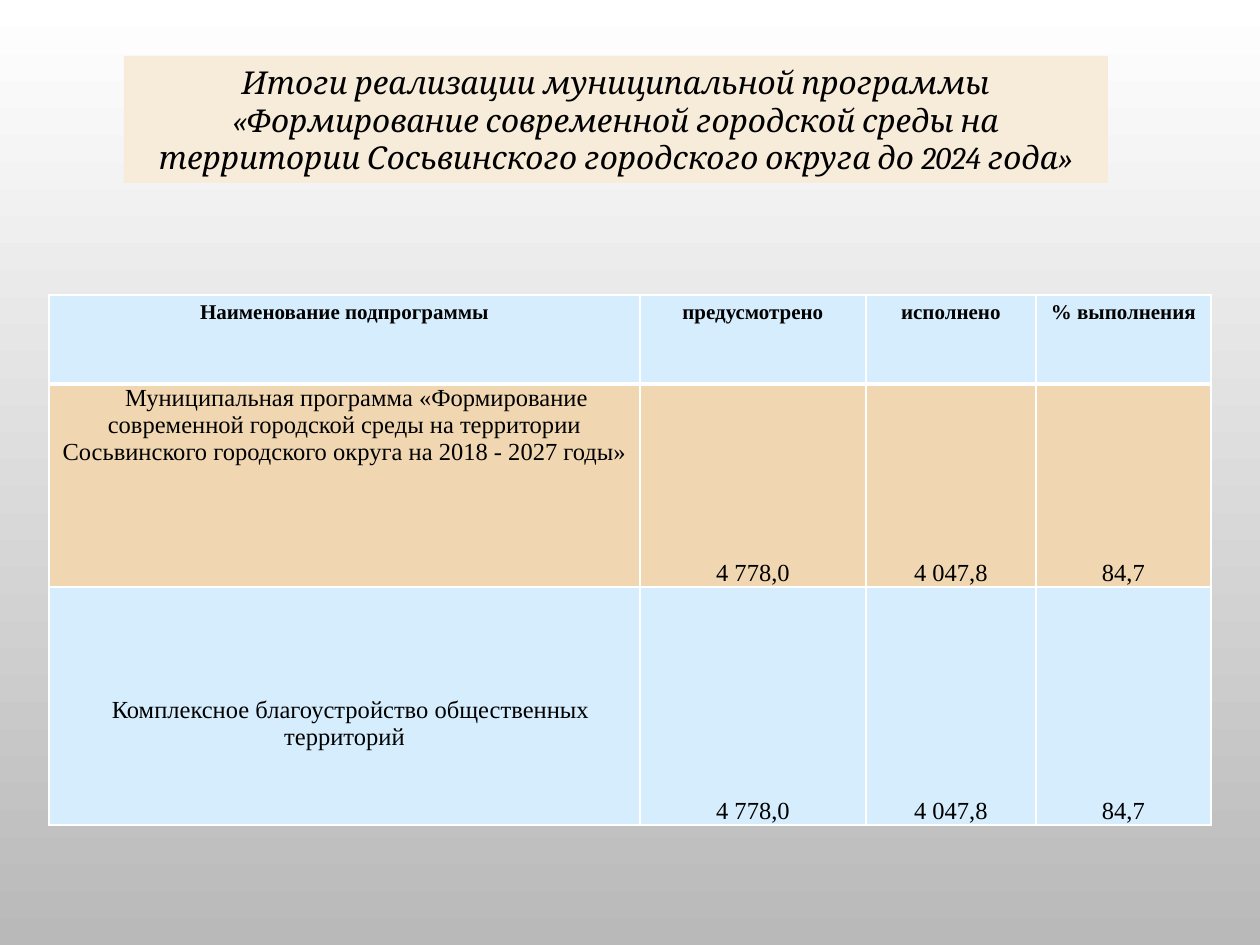
from lxml import etree
from pptx import Presentation
from pptx.dml.color import RGBColor
from pptx.enum.shapes import MSO_SHAPE
from pptx.enum.text import MSO_ANCHOR, PP_ALIGN
from pptx.oxml.ns import qn
from pptx.util import Emu, Pt

RECT = MSO_SHAPE.RECTANGLE
CENTER = PP_ALIGN.CENTER
TOP, MIDDLE, BOTTOM = MSO_ANCHOR.TOP, MSO_ANCHOR.MIDDLE, MSO_ANCHOR.BOTTOM

BLACK = RGBColor(0x00, 0x00, 0x00)
WHITE = RGBColor(0xFF, 0xFF, 0xFF)
GRAY = RGBColor(0xB9, 0xB9, 0xB9)
CREAM = RGBColor(0xF7, 0xEB, 0xD9)
BLUE = RGBColor(0xD5, 0xED, 0xFC)
SAND = RGBColor(0xF0, 0xD7, 0xB2)

TITLE = ("Итоги реализации муниципальной программы «Формирование современной "
         "городской среды на территории Сосьвинского городского округа до 2024 года»")
HEADER = ["Наименование подпрограммы", "предусмотрено", "исполнено", "% выполнения"]
VALUES = ["4 778,0", "4 047,8", "84,7"]
# Name, fill, top margin and first-line indent of each body row
PROGRAMS = [
    ("Муниципальная программа «Формирование современной городской среды "
     "на территории Сосьвинского городского округа на 2018 - 2027 годы»", SAND, 1, 24),
    ("Комплексное благоустройство общественных территорий", BLUE, 110, 12),
]
COLUMNS = [591, 226, 170, 175]
ROWS = [89, 203, 238]


def px(n):
    return Emu(round(n * 914400 / 126))


def set_text(p, text, font, size, bold=False, italic=False):
    p.text = text
    p.alignment = CENTER
    f = p.font
    f.name, f.size, f.bold, f.italic = font, Pt(size), bold, italic
    f.color.rgb = BLACK


def set_borders(cell, bottom):
    tcPr = cell._tc.get_or_add_tcPr()
    widths = {"a:lnL": 1, "a:lnR": 1, "a:lnT": 1, "a:lnB": bottom}
    for i, (tag, width) in enumerate(widths.items()):
        ln = etree.Element(qn(tag), w=str(Pt(width)))
        fill = etree.SubElement(ln, qn("a:solidFill"))
        etree.SubElement(fill, qn("a:srgbClr"), val=str(WHITE))
        tcPr.insert(i, ln)


def set_cell(cell, text, fill, size, margins, anchor=TOP, bold=False, bottom=1):
    cell.fill.solid()
    cell.fill.fore_color.rgb = fill
    (cell.margin_left, cell.margin_top,
     cell.margin_right, cell.margin_bottom) = [px(m) for m in margins]
    cell.vertical_anchor = anchor
    p = cell.text_frame.paragraphs[0]
    set_text(p, text, "Times New Roman", size, bold)
    set_borders(cell, bottom)
    return p


def add_background(s):
    fill = s.background.fill
    fill.gradient()
    fill.gradient_angle = 270
    for stop, color, position in zip(fill.gradient_stops, (WHITE, GRAY), (0, 1)):
        stop.color.rgb = color
        stop.position = position


def add_title(s):
    sp = s.shapes.add_shape(RECT, px(124), px(56), px(984), px(127))
    sp.shadow.inherit = False
    sp.fill.solid()
    sp.fill.fore_color.rgb = CREAM
    sp.line.fill.background()
    tf = sp.text_frame
    tf.word_wrap = True
    tf.vertical_anchor = MIDDLE
    set_text(tf.paragraphs[0], TITLE, "Cambria", 18, italic=True)


def add_results(s):
    table = s.shapes.add_table(len(ROWS), len(COLUMNS), px(49), px(295),
                               px(sum(COLUMNS)), px(sum(ROWS))).table
    for column, width in zip(table.columns, COLUMNS):
        column.width = px(width)
    for row, height in zip(table.rows, ROWS):
        row.height = px(height)

    # Header row
    for c, text in enumerate(HEADER):
        set_cell(table.cell(0, c), text, BLUE, 12, (13, 6, 13, 6), bold=True, bottom=3)

    # Program names and their values
    for r, (name, fill, top, indent) in enumerate(PROGRAMS, 1):
        p = set_cell(table.cell(r, 0), name, fill, 14, (1, top, 1, 0))
        p._p.get_or_add_pPr().set("indent", str(px(indent)))
        for c, value in enumerate(VALUES, 1):
            p = set_cell(table.cell(r, c), value, fill, 14, (9, 0, 9, 0), BOTTOM)
            p.line_spacing = 1.15


def main():
    prs = Presentation()
    prs.slide_width, prs.slide_height = px(1260), px(945)
    s = prs.slides.add_slide(prs.slide_layouts[6])
    add_background(s)
    add_results(s)
    add_title(s)
    prs.save("out.pptx")


if __name__ == "__main__":
    main()
